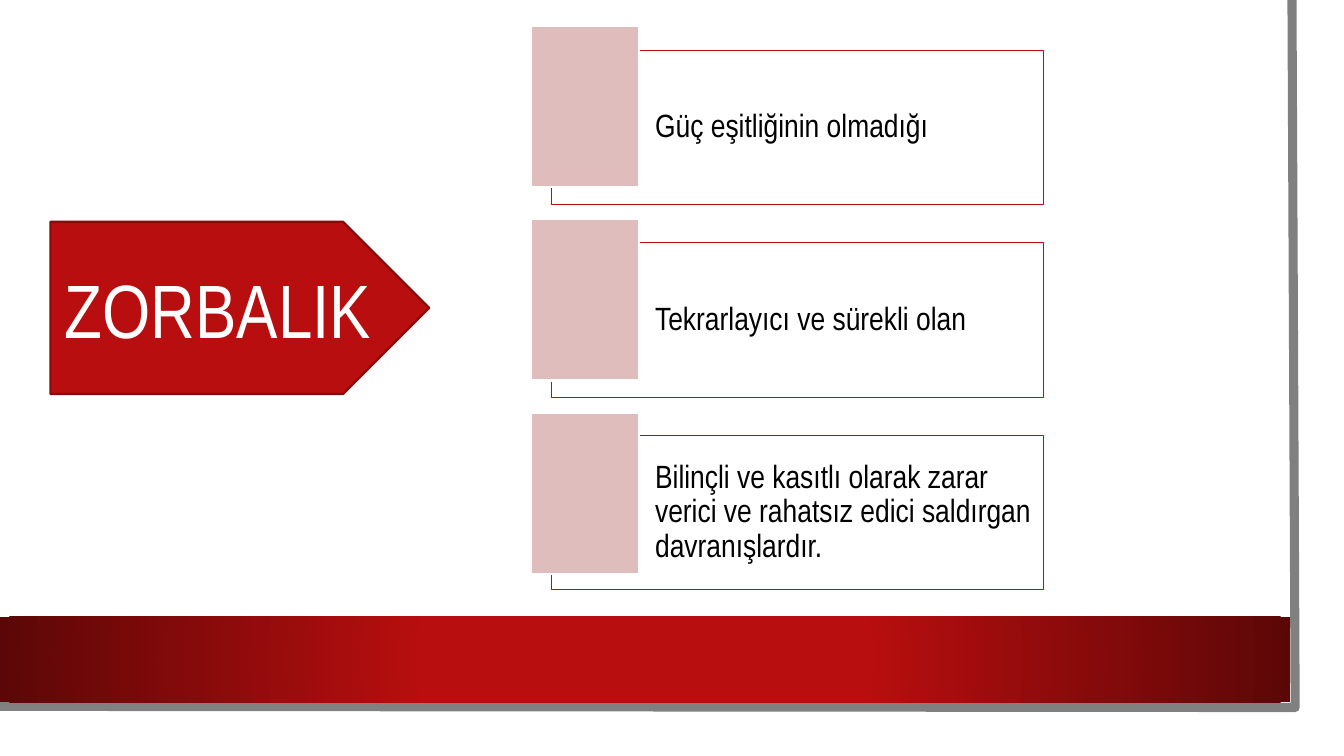
import pptx
import pptx.util
import pptx.dml.color
import pptx.enum.shapes
import pptx.enum.text
import pptx.oxml
import pptx.oxml.ns

Cm = pptx.util.Cm
Pt = pptx.util.Pt
SHAPE = pptx.enum.shapes.MSO_SHAPE
ALIGN = pptx.enum.text.PP_ALIGN

COLORS = {
    "white": "FFFFFF",
    "black": "000000",
    "red": "B80E0F",
    "arrow_edge": "880A0B",
    "band_edge": "5C0707",
    "tile": "DFBDBD",
    "frame": "808080",
}


def rgb(name):
    return pptx.dml.color.RGBColor.from_string(COLORS[name])


def write(tf, text, size, color="black", align=ALIGN.LEFT, spacing=1.0,
          insets=(0.25, 0.25, 0.25, 0.25)):
    """Put one formatted paragraph in a text frame."""
    tf.word_wrap = True
    tf.auto_size = pptx.enum.text.MSO_AUTO_SIZE.NONE
    tf.vertical_anchor = pptx.enum.text.MSO_ANCHOR.MIDDLE
    (tf.margin_left, tf.margin_top,
     tf.margin_right, tf.margin_bottom) = map(Cm, insets)
    p = tf.paragraphs[0]
    p.alignment, p.line_spacing = align, spacing
    r = p.add_run()
    r.text = text
    r.font.name, r.font.size = "Arial Narrow", Pt(size)
    r.font.color.rgb = rgb(color)


class Deck:
    """Holds the presentation and the current slide."""

    def __init__(self, width, height):
        self.prs = pptx.Presentation()
        self.prs.slide_width, self.prs.slide_height = Cm(width), Cm(height)
        self.slide = self.prs.slides.add_slide(self.prs.slide_layouts[5])

    def shape(self, kind, box, fill, line=None, weight=0.75, opacity=None):
        sp = self.slide.shapes.add_shape(kind, *map(Cm, box))
        sp.shadow.inherit = False
        sp.fill.solid()
        sp.fill.fore_color.rgb = rgb(fill)
        if opacity is not None:
            color = sp.fill._xPr.find(".//" + pptx.oxml.ns.qn("a:srgbClr"))
            color.append(pptx.oxml.parse_xml(
                f'<a:alpha {pptx.oxml.ns.nsdecls("a")} val="{opacity * 1000}"/>'))
        self.outline(sp, line, weight)
        return sp

    def outline(self, sp, line, weight):
        if line is None:
            sp.line.fill.background()
        else:
            sp.line.color.rgb = rgb(line)
            sp.line.width = Pt(weight)

    def band(self, box, inner, outer):
        sp = self.shape(SHAPE.RECTANGLE, box, inner)
        solid = sp._element.spPr.find(pptx.oxml.ns.qn("a:solidFill"))
        solid.getparent().replace(solid, pptx.oxml.parse_xml(
            f'<a:gradFill {pptx.oxml.ns.nsdecls("a")} rotWithShape="1"><a:gsLst>'
            f'<a:gs pos="34000"><a:srgbClr val="{COLORS[inner]}"/></a:gs>'
            f'<a:gs pos="100000"><a:srgbClr val="{COLORS[outer]}"/></a:gs>'
            '</a:gsLst><a:path path="circle">'
            '<a:fillToRect l="50000" t="50000" r="50000" b="50000"/>'
            '</a:path></a:gradFill>'))

    def polyline(self, points, line, weight):
        points = [(Cm(x), Cm(y)) for x, y in points]
        builder = self.slide.shapes.build_freeform(*points[0])
        builder.add_line_segments(points[1:], close=False)
        sp = builder.convert_to_shape()
        sp.shadow.inherit = False
        sp.fill.background()
        self.outline(sp, line, weight)

    def title(self, text, box, **style):
        sp = self.slide.shapes.title
        sp.left, sp.top, sp.width, sp.height = map(Cm, box)
        write(sp.text_frame, text, **style)
        # Bring the title in front of the shapes drawn so far
        self.slide.shapes._spTree.append(sp._element)

    def card(self, text, card_top, tile_top):
        sp = self.shape(SHAPE.RECTANGLE, (13.89, card_top, 12.4, 3.89),
                        "white", "red", opacity=40)
        write(sp.text_frame, text, 23, spacing=0.9,
              insets=(2.62, 0.25, 0.25, 0.25))
        self.shape(SHAPE.RECTANGLE, (13.39, tile_top, 2.72, 4.06),
                   "tile", "white", 1.5)


def main():
    deck = Deck(33.87, 19.05)

    # Page with grey edge and red band
    deck.shape(SHAPE.RECTANGLE, (0, 0, 33.27, 18.47), "white")
    deck.polyline([(32.56, 0), (32.64, 17.83), (-0.08, 17.8)], "frame", 6.5)
    deck.band((0, 15.54, 32.51, 2.16), "red", "band_edge")

    # Features of bullying
    features = [
        "Güç eşitliğinin olmadığı",
        "Tekrarlayıcı ve sürekli olan",
        "Bilinçli ve kasıtlı olarak zarar verici ve rahatsız edici "
        "saldırgan davranışlardır.",
    ]
    for i, text in enumerate(features):
        deck.card(text, card_top=1.27 + 4.85 * i, tile_top=0.66 + 4.87 * i)

    # Title on its arrow
    deck.shape(SHAPE.PENTAGON, (1.27, 5.59, 9.55, 4.34),
               "red", "arrow_edge", 1.5)
    deck.title("ZORBALIK", (1.27, 5.59, 8.46, 4.34), size=54,
               color="white", align=ALIGN.CENTER)

    deck.prs.save("out.pptx")


if __name__ == "__main__":
    main()
